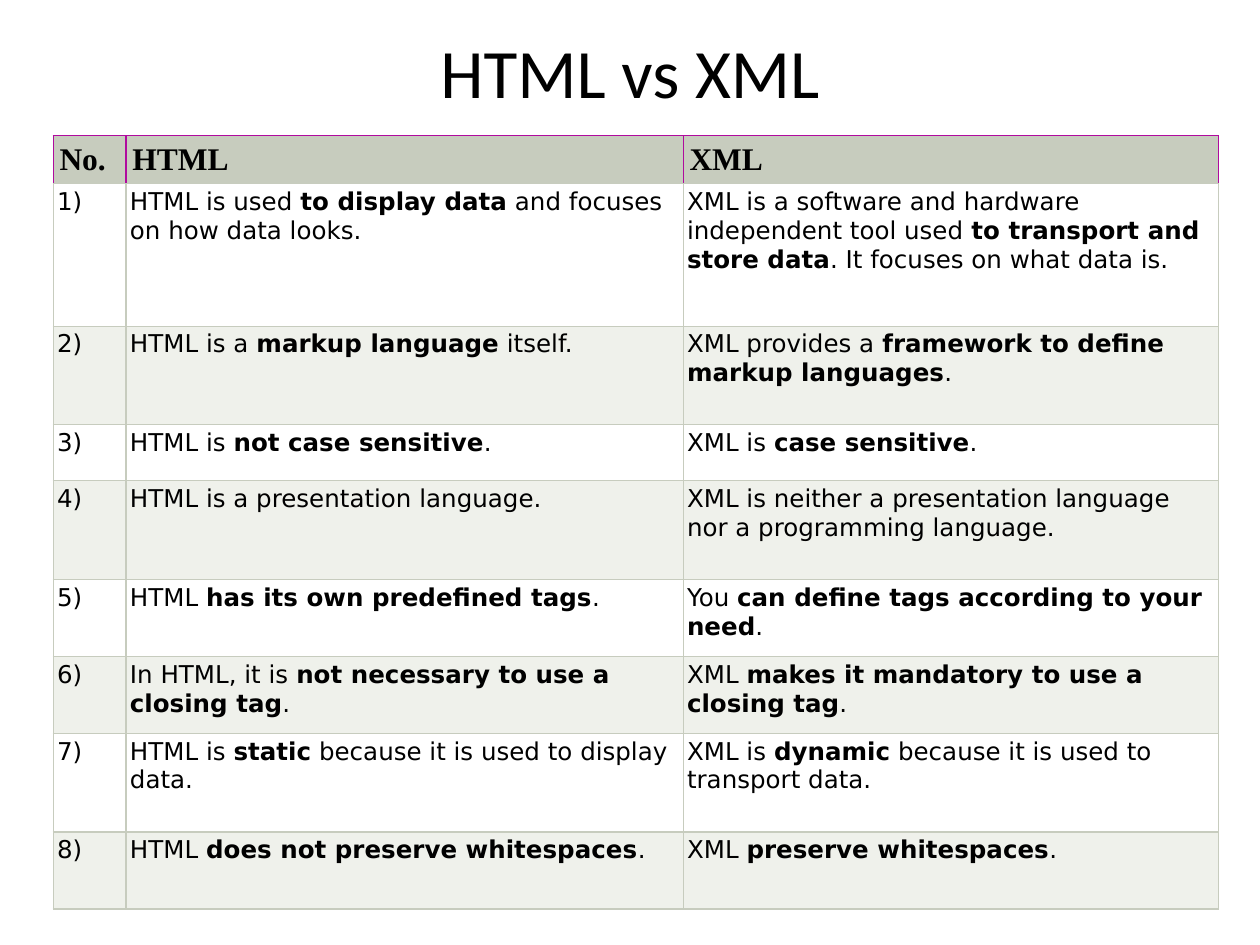
from dataclasses import dataclass

from lxml import etree
from pptx import Presentation
from pptx.dml.color import RGBColor
from pptx.enum import text
from pptx.oxml import ns
from pptx.util import Cm, Pt


@dataclass(frozen=True)
class Theme:
    ink: str = "000000"
    header_fill: str = "C7CCBE"
    band_fills: tuple = ("FFFFFF", "EFF1EB")
    grid: str = "C7CCBE"
    header_grid: str = "B00A9E"
    border_width: float = 0.75
    title_font: tuple = ("Calibri", 39.6)
    header_font: tuple = ("Times New Roman", 18)
    body_font: tuple = ("DejaVu Sans", 14)


HEADERS = ("No.", "HTML", "XML")
COMPARISONS = (
    ("HTML is used **to display data** and focuses on how data looks.",
     "XML is a software and hardware independent tool used "
     "**to transport and store data**. It focuses on what data is."),
    ("HTML is a **markup language** itself.",
     "XML provides a **framework to define markup languages**."),
    ("HTML is **not case sensitive**.", "XML is **case sensitive**."),
    ("HTML is a presentation language.",
     "XML is neither a presentation language nor a programming language."),
    ("HTML **has its own predefined tags**.",
     "You **can define tags according to your need**."),
    ("In HTML, it is **not necessary to use a closing tag**.",
     "XML **makes it mandatory to use a closing tag**."),
    ("HTML is **static** because it is used to display data.",
     "XML is **dynamic** because it is used to transport data."),
    ("HTML **does not preserve whitespaces**.", "XML **preserve whitespaces**."),
)
COLUMN_WIDTHS = (1.47, 11.23, 10.8)
ROW_HEIGHTS = (0.84, 2.87, 1.99, 1.13, 1.99, 1.55, 1.55, 1.99, 1.55)


def apply(target, values):
    for name, value in values.items():
        setattr(target, name, value)


class SlideBuilder:
    def __init__(self, presentation, theme):
        self.theme = theme
        self.slide = presentation.slides.add_slide(presentation.slide_layouts[5])

    def add_runs(self, paragraph, content, font, bold=False):
        name, size = font
        for index, part in enumerate(content.split("**")):
            if part:
                run = paragraph.add_run()
                run.text = part
                apply(run.font, {"name": name, "size": Pt(size),
                                 "bold": bold or index % 2 == 1})
                run.font.color.rgb = RGBColor.from_string(self.theme.ink)

    def title(self, content, left, top, width, height):
        shape = self.slide.shapes.title
        apply(shape, {"left": Cm(left), "top": Cm(top),
                      "width": Cm(width), "height": Cm(height)})
        apply(shape.text_frame, {"auto_size": text.MSO_AUTO_SIZE.NONE,
                                 "vertical_anchor": text.MSO_ANCHOR.MIDDLE})
        paragraph = shape.text_frame.paragraphs[0]
        paragraph.alignment = text.PP_ALIGN.CENTER
        self.add_runs(paragraph, content, self.theme.title_font)

    def borders(self, cell, colors):
        properties = cell._tc.get_or_add_tcPr()
        for side, color in zip("LRTB", colors):
            line = etree.SubElement(properties, ns.qn(f"a:ln{side}"),
                                    w=str(Pt(self.theme.border_width)))
            fill = etree.SubElement(line, ns.qn("a:solidFill"))
            etree.SubElement(fill, ns.qn("a:srgbClr"), val=color)

    def cell(self, cell, content, header, fill):
        theme = self.theme
        edge = theme.header_grid if header else theme.grid
        self.borders(cell, (edge, edge, edge, theme.grid))
        cell.fill.solid()
        cell.fill.fore_color.rgb = RGBColor.from_string(fill)
        inset = Cm(0.13 if header else 0.08)
        apply(cell, {"margin_left": inset, "margin_right": inset,
                     "margin_top": inset, "margin_bottom": inset,
                     "vertical_anchor": text.MSO_ANCHOR.TOP})
        font = theme.header_font if header else theme.body_font
        self.add_runs(cell.text_frame.paragraphs[0], content, font, header)

    def table(self, rows, left, top, widths, heights):
        frame = self.slide.shapes.add_table(
            len(rows), len(widths), Cm(left), Cm(top),
            Cm(sum(widths)), Cm(sum(heights)))
        table = frame.table
        apply(table, {"first_row": False, "horz_banding": False})
        for column, width in zip(table.columns, widths):
            column.width = Cm(width)
        for index, (row, height, contents) in enumerate(
                zip(table.rows, heights, rows)):
            row.height = Cm(height)
            header = index == 0
            fill = (self.theme.header_fill if header
                    else self.theme.band_fills[(index - 1) % 2])
            for cell, content in zip(row.cells, contents):
                self.cell(cell, content, header, fill)


def main():
    presentation = Presentation()
    apply(presentation, {"slide_width": Cm(25.4), "slide_height": Cm(19.05)})
    builder = SlideBuilder(presentation, Theme())
    builder.title("HTML vs XML", 1.27, 0.76, 22.86, 1.35)
    rows = [HEADERS] + [(f"{number})", *pair)
                        for number, pair in enumerate(COMPARISONS, 1)]
    builder.table(rows, 1.07, 2.74, COLUMN_WIDTHS, ROW_HEIGHTS)
    presentation.save("out.pptx")


if __name__ == "__main__":
    main()
